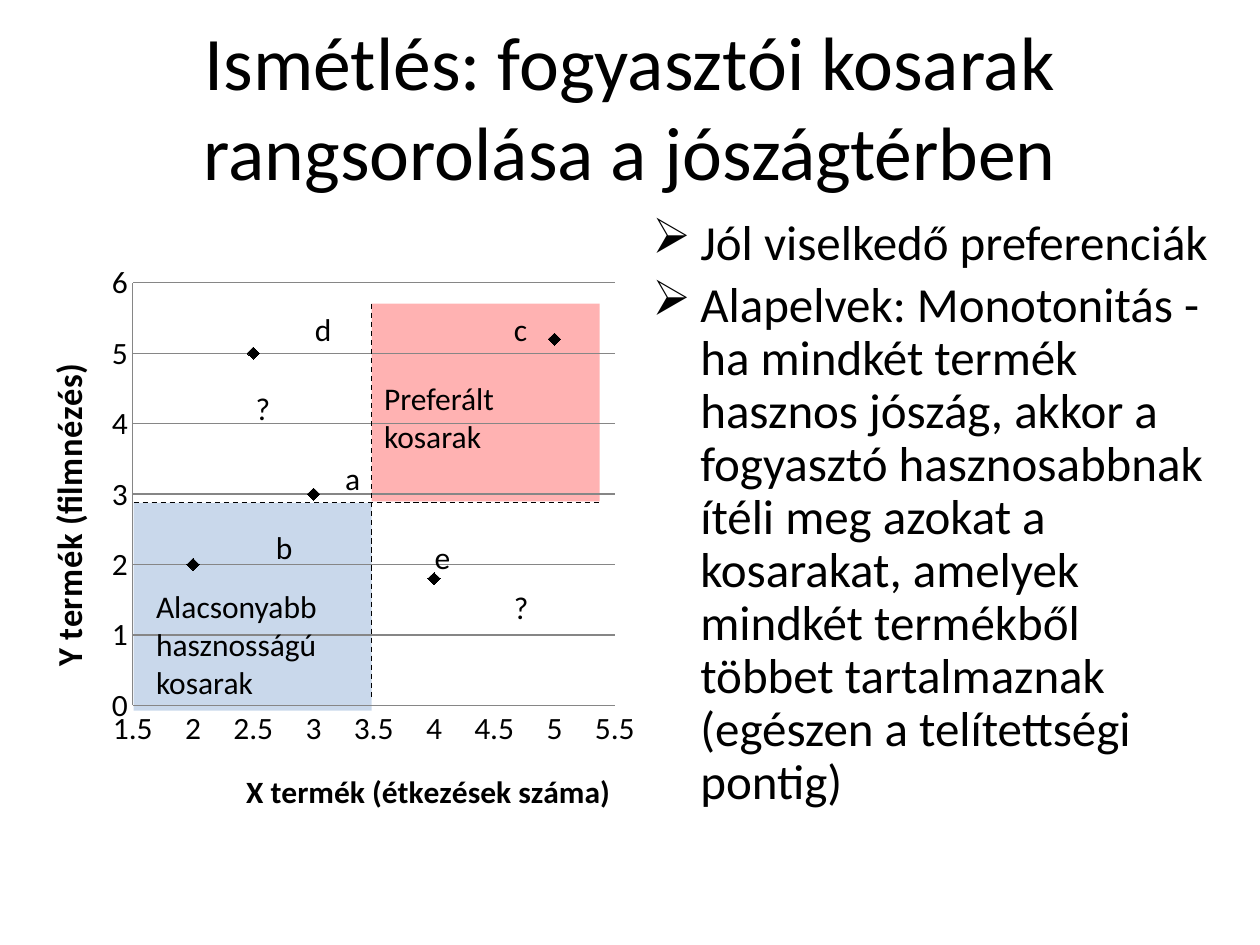
from pptx import Presentation
from pptx import util as u
from pptx.chart.data import XyChartData
from pptx.dml.color import RGBColor
from pptx.enum import chart as ch, dml, shapes, text
from pptx.oxml import parse_xml
from pptx.oxml.ns import nsdecls, qn
from lxml import etree

BLACK, GREY = "000000", "868686"
rgb = RGBColor.from_string


def add_text(at, lines, size, name="Calibri"):
    box = page.shapes.add_textbox(*map(u.Inches, at))
    frame = box.text_frame
    frame.word_wrap = True
    for i, line in enumerate(lines):
        para = frame.paragraphs[0] if i == 0 else frame.add_paragraph()
        para.text = line
        para.font.size, para.font.name = u.Pt(size), name
        para.font.color.rgb = rgb(BLACK)
    return frame


def set_layout(parent, index, **values):
    """Give a chart part a manual layout, in fractions of the chart."""
    for old in parent.findall(qn("c:layout")):
        parent.remove(old)
    inner = '<c:layoutTarget val="inner"/>' if "w" in values else ""
    modes = '<c:xMode val="edge"/><c:yMode val="edge"/>'
    numbers = "".join(f'<c:{key} val="{value}"/>' for key, value in values.items())
    parent.insert(index, parse_xml(
        f'<c:layout {nsdecls("c")}><c:manualLayout>{inner}{modes}{numbers}'
        "</c:manualLayout></c:layout>"))


deck = Presentation()
deck.slide_width, deck.slide_height = u.Inches(10), u.Inches(7.5)
page = deck.slides.add_slide(deck.slide_layouts[6])

# Shaded regions behind the chart
for at, color in [((2.95, 2.41, 1.81, 1.57), "FF0000"),
                  ((1.06, 3.99, 1.89, 1.65), "4F81BD")]:
    region = page.shapes.add_shape(shapes.MSO_SHAPE.RECTANGLE, *map(u.Inches, at))
    region.shadow.inherit = False
    region.fill.solid()
    region.fill.fore_color.rgb = rgb(color)
    region.line.fill.background()
    fill_color = region._element.spPr.find(".//" + qn("a:srgbClr"))
    etree.SubElement(fill_color, qn("a:alpha"), val="30000")

# Scatter chart of the baskets
data = XyChartData()
baskets = data.add_series("Series 1")
for x, y in [(2, 2), (2.5, 5), (4, 1.8), (5, 5.2), (3, 3)]:
    baskets.add_data_point(x, y)
chart = page.shapes.add_chart(
    ch.XL_CHART_TYPE.XY_SCATTER, *map(u.Inches, (0.2, 1.94, 4.88, 4.57)), data).chart
chart.has_legend = chart.has_title = False
chart.font.size, chart.font.name = u.Pt(18), "Calibri"
chart.font.color.rgb = rgb(BLACK)
plot = chart.plots[0]
plot.vary_by_categories = False
series = plot.series[0]
series.smooth = False
series.format.line.fill.background()
series.marker.style, series.marker.size = ch.XL_MARKER_STYLE.DIAMOND, 7
series.marker.format.fill.solid()
series.marker.format.fill.fore_color.rgb = rgb(BLACK)
series.marker.format.line.color.rgb = rgb(BLACK)
set_layout(chart._chartSpace.find(".//" + qn("c:plotArea")), 0,
           x=0.175, y=0.068, w=0.784, h=0.748)

for axis, title, size, low, high, step, left, top in [
        (chart.category_axis, "X termék (étkezések száma)", 18, 1.5, 5.5, 0.5, 0.35, 0.92),
        (chart.value_axis, "Y termék (filmnézés)", 20, 0, 6, 1, 0.02, 0.21)]:
    axis.minimum_scale, axis.maximum_scale, axis.major_unit = low, high, step
    axis.major_tick_mark = axis.minor_tick_mark = ch.XL_TICK_MARK.NONE
    axis.has_major_gridlines = axis is chart.value_axis
    axis.tick_labels.number_format = "General"
    axis.tick_labels.number_format_is_linked = False
    axis.format.line.color.rgb = rgb(GREY)
    para = axis.axis_title.text_frame.paragraphs[0]
    para.text = title
    para.font.size, para.font.bold, para.font.name = u.Pt(size), True, "Calibri"
    para.font.color.rgb = rgb(BLACK)
    set_layout(axis.axis_title._element, 1, x=left, y=top)
chart.value_axis.major_gridlines.format.line.color.rgb = rgb(GREY)
turned = chart.value_axis.axis_title.text_frame._txBody.bodyPr
turned.set("rot", "-5400000")
turned.set("vert", "horz")

title = add_text((0.75, 0.21, 8.5, 1.25),
                 ["Ismétlés: fogyasztói kosarak rangsorolása a jószágtérben"], 43.2)
title.vertical_anchor = text.MSO_ANCHOR.MIDDLE
title.paragraphs[0].alignment = text.PP_ALIGN.CENTER

# Dashed lines through basket a
for ends in [(2.95, 2.41, 2.95, 5.56), (1.06, 3.99, 4.76, 3.99)]:
    divider = page.shapes.add_connector(
        shapes.MSO_CONNECTOR.STRAIGHT, *map(u.Inches, ends))
    divider.line.color.rgb = rgb(BLACK)
    divider.line.width = u.Pt(0.75)
    divider.line.dash_style = dml.MSO_LINE.DASH
    etree.SubElement(divider._element.spPr, qn("a:effectLst"))

# Labels in the goods space
for at, lines in [
        ((1.14, 4.61, 2.36, 1.01), ["Alacsonyabb", "hasznosságú", "kosarak"]),
        ((2.95, 2.96, 1.81, 0.71), ["Preferált", "kosarak"]),
        ((1.93, 3.04, 0.47, 0.4), ["?"]),
        ((3.98, 4.62, 0.47, 0.4), ["?"]),
        ((2.64, 3.59, 0.31, 0.4), ["a"]),
        ((3.98, 2.41, 0.39, 0.4), ["c"]),
        ((2.4, 2.41, 0.39, 0.4), ["d"]),
        ((2.09, 4.14, 0.31, 0.4), ["b"]),
        ((3.35, 4.22, 0.31, 0.4), ["e"])]:
    add_text(at, lines, 18).auto_size = text.MSO_AUTO_SIZE.SHAPE_TO_FIT_TEXT

body = add_text((5.08, 1.68, 4.72, 5.61), [
    "Jól viselkedő preferenciák",
    "Alapelvek: Monotonitás - ha mindkét termék hasznos jószág, akkor a fogyasztó "
    "hasznosabbnak ítéli meg azokat a kosarakat, amelyek mindkét termékből többet "
    "tartalmaznak (egészen a telítettségi pontig)"], 28)
for para in body.paragraphs:
    para.line_spacing, para.space_before = 0.9, u.Pt(5.6)
    props = para._p.get_or_add_pPr()
    props.set("marL", str(u.Inches(0.38)))
    props.set("indent", str(u.Inches(-0.38)))
    bullet = parse_xml(f'<a:buChar {nsdecls("a")} char="➢"/>')
    props.find(qn("a:defRPr")).addprevious(bullet)

deck.save("out.pptx")
